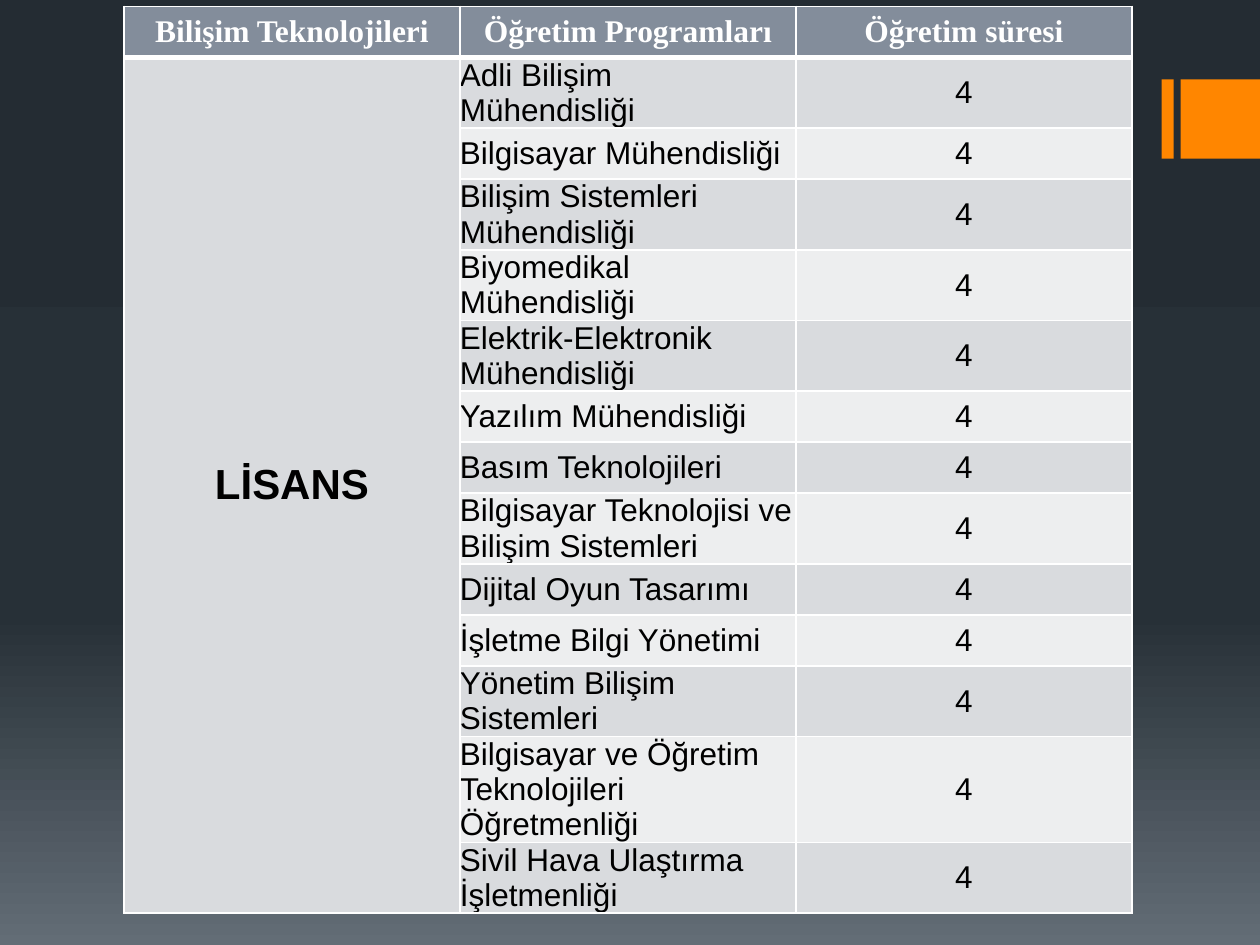
from copy import deepcopy

from lxml import etree
from pptx import Presentation
from pptx import util as u
from pptx.dml.color import RGBColor
from pptx.enum import shapes, text
from pptx.oxml.ns import qn

COLORS = {
    "top": "242C33",
    "middle": "273037",
    "bottom": "636D76",
    "accent": "FF8600",
    "header": "838D9B",
    "band_dark": "D9DBDE",
    "band_light": "EDEEEF",
    "white": "FFFFFF",
    "black": "000000",
}
HEADERS = ["Bilişim Teknolojileri", "Öğretim Programları", "Öğretim süresi"]
LEVEL = "LİSANS"
YEARS = "4"
PROGRAMS = [
    "Adli Bilişim Mühendisliği",
    "Bilgisayar Mühendisliği",
    "Bilişim Sistemleri Mühendisliği",
    "Biyomedikal Mühendisliği",
    "Elektrik-Elektronik Mühendisliği",
    "Yazılım Mühendisliği",
    "Basım Teknolojileri",
    "Bilgisayar Teknolojisi ve Bilişim Sistemleri",
    "Dijital Oyun Tasarımı",
    "İşletme Bilgi Yönetimi",
    "Yönetim Bilişim Sistemleri",
    "Bilgisayar ve Öğretim Teknolojileri Öğretmenliği",
    "Sivil Hava Ulaştırma İşletmenliği",
]


def color(name):
    return RGBColor.from_string(COLORS[name])


def paint_background(slide):
    """Fill the slide with a three-stop gradient running downwards."""
    fill = slide.background.fill
    fill.gradient()
    fill.gradient_angle = 270
    stop_list = slide._element.find(".//" + qn("a:gsLst"))
    stop_list.append(deepcopy(stop_list[-1]))
    stops = [("top", 0), ("middle", 0.65), ("bottom", 1)]
    for stop, (name, position) in zip(fill.gradient_stops, stops):
        stop.color.rgb = color(name)
        stop.position = position


def add_accent_bar(slide, left, width):
    bar = slide.shapes.add_shape(
        shapes.MSO_SHAPE.RECTANGLE, u.Cm(left), u.Cm(1.6), u.Cm(width), u.Cm(1.6))
    bar.shadow.inherit = False
    bar.fill.solid()
    bar.fill.fore_color.rgb = color("accent")
    bar.line.fill.background()


def set_borders(cell, top=1, bottom=1):
    """Draw white cell borders; widths are in points."""
    properties = cell._tc.get_or_add_tcPr()
    for side, width in (("L", 1), ("R", 1), ("T", top), ("B", bottom)):
        line = etree.SubElement(properties, qn(f"a:ln{side}"), w=str(u.Pt(width)))
        fill = etree.SubElement(line, qn("a:solidFill"))
        etree.SubElement(fill, qn("a:srgbClr"), val=COLORS["white"])


def style_cell(cell, fill, size=18, font="Arial", ink="black", bold=False, centered=True):
    cell.margin_left = cell.margin_right = cell.margin_top = cell.margin_bottom = 0
    cell.vertical_anchor = text.MSO_ANCHOR.MIDDLE
    cell.fill.solid()
    cell.fill.fore_color.rgb = color(fill)
    paragraph = cell.text_frame.paragraphs[0]
    paragraph.alignment = text.PP_ALIGN.CENTER if centered else text.PP_ALIGN.LEFT
    for run in paragraph.runs:
        run.font.size = u.Pt(size)
        run.font.name = font
        run.font.bold = bold
        run.font.color.rgb = color(ink)


def add_program_table(slide):
    rows = [HEADERS] + [["", program, YEARS] for program in PROGRAMS]
    rows[1][0] = LEVEL
    row_height = u.Cm(1.03)
    table = slide.shapes.add_table(
        len(rows), len(HEADERS), u.Cm(2.5), u.Cm(0.13),
        u.Cm(20.32), row_height * len(rows)).table
    for row in table.rows:
        row.height = row_height

    for row_index, values in enumerate(rows):
        band = "band_dark" if row_index % 2 else "band_light"
        for column_index, value in enumerate(values):
            cell = table.cell(row_index, column_index)
            cell.text_frame.text = value
            set_borders(cell, top=3 if row_index == 1 else 1,
                        bottom=3 if row_index == 0 else 1)
            if row_index == 0:
                style_cell(cell, "header", font="Times New Roman", ink="white", bold=True)
            elif column_index == 0:
                style_cell(cell, "band_dark", size=24, bold=True)
            else:
                style_cell(cell, band, centered=column_index == 2)
    table.cell(1, 0).merge(table.cell(len(PROGRAMS), 0))


def main():
    presentation = Presentation()
    presentation.slide_width = u.Cm(25.4)
    presentation.slide_height = u.Cm(19.05)
    slide = presentation.slides.add_slide(presentation.slide_layouts[6])
    paint_background(slide)
    add_accent_bar(slide, left=23.42, width=0.24)
    add_accent_bar(slide, left=23.8, width=1.6)
    add_program_table(slide)
    presentation.save("out.pptx")


if __name__ == "__main__":
    main()
